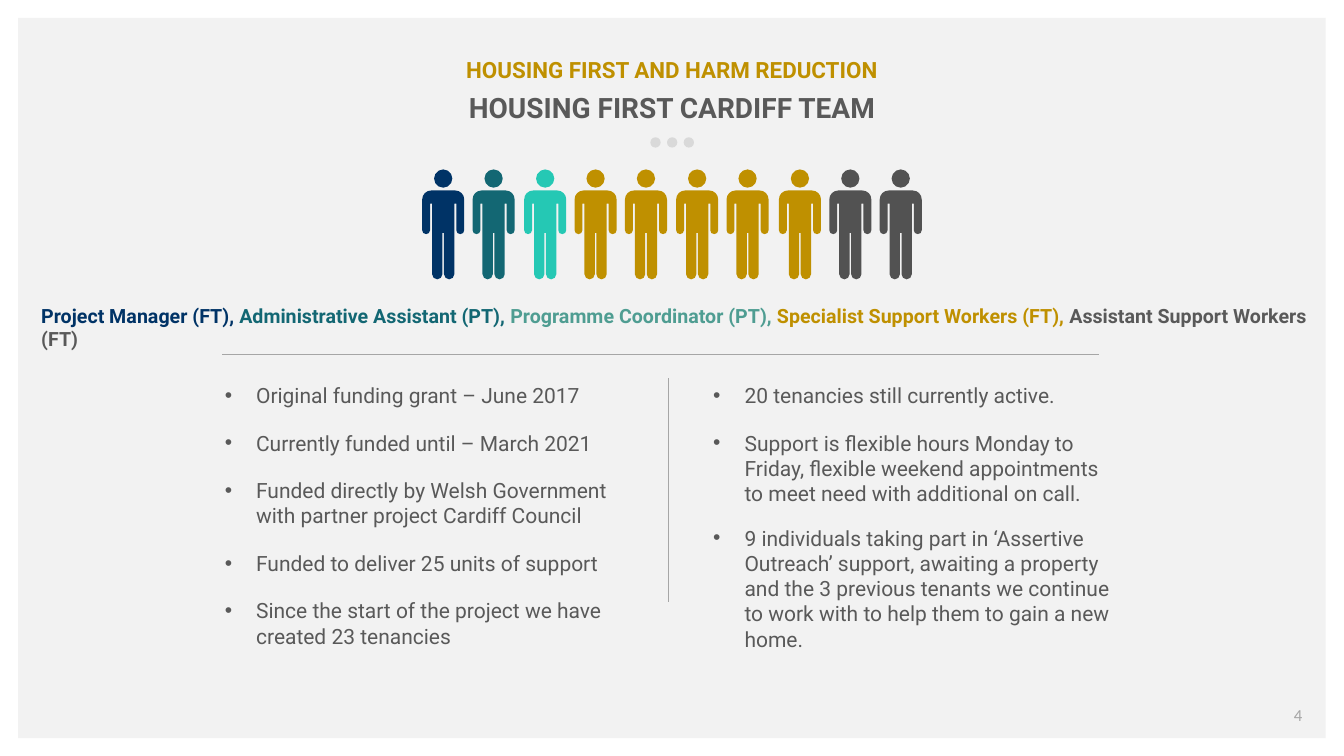
from math import cos, radians, sin

from lxml import etree
from pptx import Presentation
from pptx.dml.color import RGBColor
from pptx.enum.shapes import MSO_CONNECTOR, MSO_SHAPE
from pptx.enum.text import MSO_ANCHOR, MSO_AUTO_SIZE, PP_ALIGN
from pptx.oxml.ns import qn
from pptx.util import Cm, Pt

RECT = MSO_SHAPE.RECTANGLE
OVAL = MSO_SHAPE.OVAL
LINE = MSO_CONNECTOR.STRAIGHT
MIDDLE = MSO_ANCHOR.MIDDLE
TOP = MSO_ANCHOR.TOP
CENTER = PP_ALIGN.CENTER
LEFT = PP_ALIGN.LEFT
FIXED = MSO_AUTO_SIZE.NONE

NAVY = "003366"
TEAL = "136773"
MINT = "25C8B4"
GOLD = "BF9000"
DARK = "525252"
GREY = "595959"
PALE = "A6A6A6"


def paint(shape, color):
    shape.shadow.inherit = False
    shape.fill.solid()
    shape.fill.fore_color.rgb = RGBColor.from_string(color)
    shape.line.fill.background()


def style(run, size, color, bold=False, face="Roboto"):
    run.font.name = face
    run.font.size = Pt(size)
    run.font.bold = bold
    run.font.color.rgb = RGBColor.from_string(color)


deck = Presentation()
deck.slide_width = Cm(33.87)
deck.slide_height = Cm(19.05)
slide = deck.slides.add_slide(deck.slide_layouts[3])
shapes = slide.shapes

panel = shapes.add_shape(RECT, Cm(0.46), Cm(0.45), Cm(32.95), Cm(18.15))
paint(panel, "F2F2F2")
shapes._spTree.insert(2, panel._element)

title = shapes.title
title.left, title.top, title.width, title.height = Cm(1.02), Cm(1.41), Cm(31.83), Cm(1.73)
frame = title.text_frame
frame.text = "HOUSING FIRST AND HARM REDUCTION\nHOUSING FIRST CARDIFF TEAM"
frame.margin_left = frame.margin_right = frame.margin_top = frame.margin_bottom = 0
frame.vertical_anchor = MIDDLE
frame.auto_size = FIXED
for para, size, color, gap in zip(frame.paragraphs, (16, 20), (GOLD, GREY), (5, 0)):
    para.alignment = CENTER
    para.space_after = Pt(gap)
    style(para.runs[0], size, color, True)

dots = shapes.add_group_shape().shapes
for i in range(3):
    paint(dots.add_shape(OVAL, Cm(16.39 + 0.42 * i), Cm(3.46), Cm(0.26), Cm(0.26)), "D9D9D9")

bends = [
    (23, 23, 23, 90, 1),
    (10, 100, 10, 180, 2),
    (20, 33, 0, 0, 0),
    (25, 33, 0, 0, 0),
    (38, 211, 13, 180, 2),
    (51, 107, 0, 0, 0),
    (55, 107, 0, 0, 0),
    (68, 211, 13, 180, 2),
    (81, 33, 0, 0, 0),
    (86, 33, 0, 0, 0),
    (96, 100, 10, 180, 2),
    (83, 23, 23, 0, 1),
]
ends = []
curves = []
for x, y, r, start, count in bends:
    for k in range(count + 1):
        turn = radians(start + 90 * k)
        dx, dy = r * cos(turn), -r * sin(turn)
        end = (x + dx, y + dy)
        ease = (0.55 * dy, -0.55 * dx)
        pair = []
        if k:
            pair = [(ends[-1][0] + last[0], ends[-1][1] + last[1]),
                    (end[0] - ease[0], end[1] - ease[1])]
        ends.append(end)
        curves.append(pair)
        last = ease

team = shapes.add_group_shape().shapes
spots = (10.64, 11.91, 13.21, 14.48, 15.75, 17.04, 18.31, 19.63, 20.9, 22.17)
for left, color in zip(spots, [NAVY, TEAL, MINT] + [GOLD] * 5 + [DARK] * 2):
    paint(team.add_shape(OVAL, Cm(left + 0.3), Cm(4.27), Cm(0.46), Cm(0.46)), color)
    pen = team.build_freeform(*ends[0], scale=Cm(0.01))
    pen.add_line_segments(ends[1:])
    torso = pen.convert_to_shape(Cm(left), Cm(4.8))
    paint(torso, color)
    nodes = list(torso._element.iter(qn("a:lnTo")))
    for node, pair in zip(nodes, curves[1:]):
        if pair:
            node.tag = qn("a:cubicBezTo")
        for spot, (x, y) in enumerate(pair):
            point = etree.Element(qn("a:pt"), x=str(round(x)), y=str(round(y)))
            node.insert(spot, point)

roles = [
    ("Project Manager (FT), ", NAVY),
    ("Administrative Assistant (PT), ", TEAL),
    ("Programme Coordinator (PT), ", "4F9D92"),
    ("Specialist Support Workers (FT), ", GOLD),
    ("Assistant Support Workers (FT)", GREY),
]
box = shapes.add_textbox(Cm(0.79), Cm(7.53), Cm(32.54), Cm(0.86))
box.text_frame.word_wrap = True
for text, color in roles:
    run = box.text_frame.paragraphs[0].add_run()
    run.text = text
    style(run, 14, color, True)

facts = [
    "Original funding grant – June 2017",
    "Currently funded until – March 2021",
    "Funded directly by Welsh Government with partner project Cardiff Council",
    "Funded to deliver 25 units of support",
    "Since the start of the project we have created 23 tenancies",
]
work = [
    "20 tenancies still currently active.",
    "Support is flexible hours Monday to Friday, flexible weekend appointments "
    "to meet need with additional on call.",
    "9 individuals taking part in ‘Assertive Outreach’ support, awaiting a property "
    "and the 3 previous tenants we continue to work with to help them to gain a new home.",
]
for spot, left, lines in ((1, 5.41, facts), (2, 17.72, work)):
    body = slide.placeholders[spot]
    body.left, body.top, body.width, body.height = Cm(left), Cm(9.51), Cm(10.82), Cm(7.6)
    frame = body.text_frame
    frame.text = "\n".join(lines)
    frame.vertical_anchor = TOP
    frame.auto_size = FIXED
    for para in frame.paragraphs:
        prop = para._p.get_or_add_pPr()
        prop.set("marL", str(Cm(0.79)))
        prop.set("indent", str(-Cm(0.79)))
        etree.SubElement(prop, qn("a:buFont")).set("typeface", "Arial")
        etree.SubElement(prop, qn("a:buChar")).set("char", "•")
        para.alignment = LEFT
        para.space_before = Pt(0)
        para.space_after = Pt(14 if para.text == work[1] else 16)
        style(para.runs[0], 15, GREY)

for x, y, right, low in ((5.6, 8.94, 27.69, 8.94), (16.84, 9.53, 16.84, 15.18)):
    rule = shapes.add_connector(LINE, Cm(x), Cm(y), Cm(right), Cm(low))
    rule.line.color.rgb = RGBColor.from_string(PALE)
    rule.line.width = Pt(0.5)
    etree.SubElement(rule._element.spPr, qn("a:effectLst"))

page = shapes.add_textbox(Cm(32.04), Cm(17.63), Cm(1.35), Cm(0.76))
page.text_frame.word_wrap = True
page.text_frame.text = "4"
para = page.text_frame.paragraphs[0]
para.alignment = CENTER
style(para.runs[0], 12, PALE, face="Calibri")

deck.save("out.pptx")
